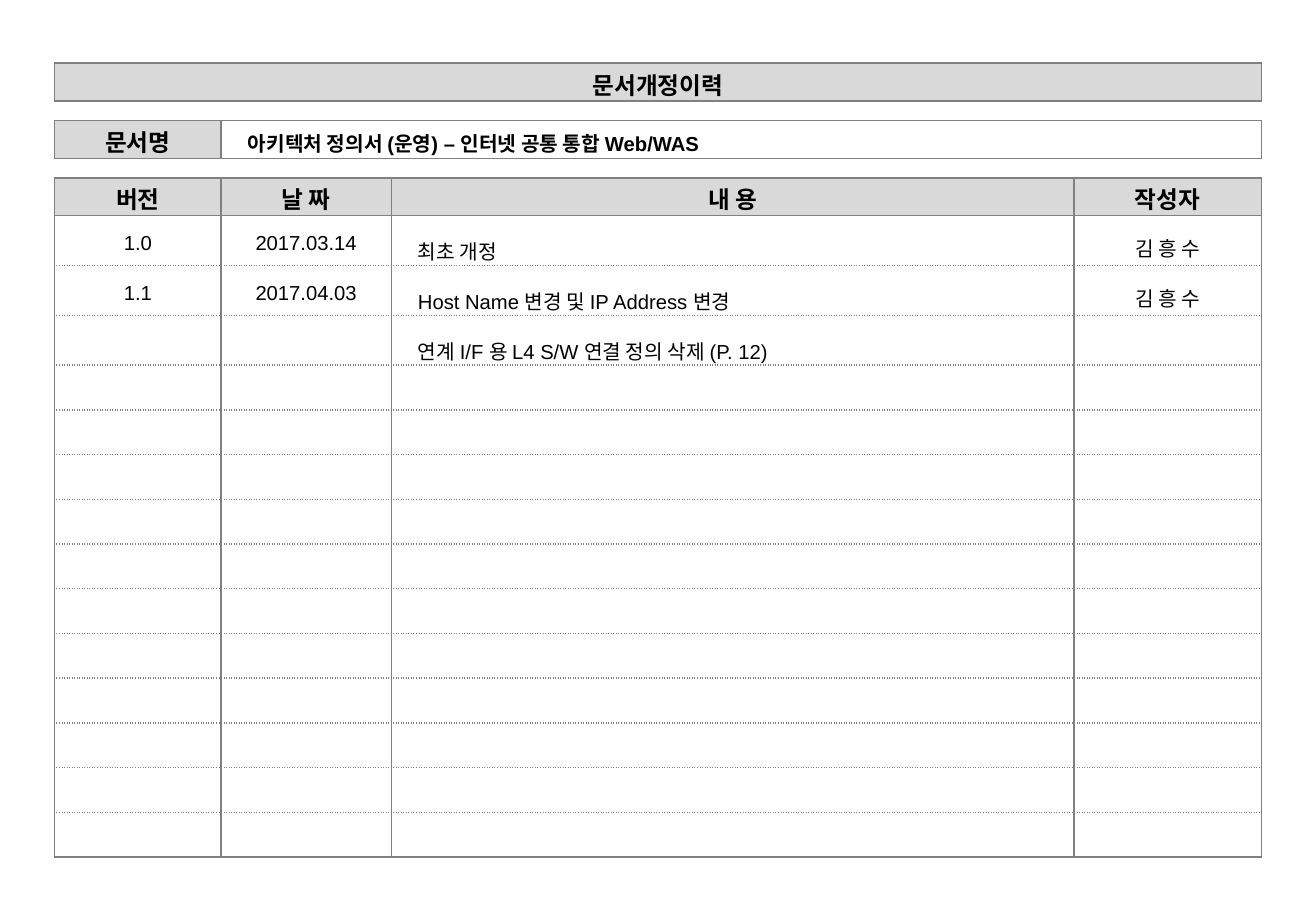
from dataclasses import dataclass

from lxml.etree import SubElement as Sub
from pptx import Presentation as Deck
from pptx.dml.color import RGBColor as Color
from pptx.enum.text import MSO_ANCHOR as Anchor, PP_ALIGN as Align
from pptx.oxml.ns import qn
from pptx.table import Table, _Cell as Cell
from pptx.util import Inches, Pt

COLORS = {"head": "D9D9D9", "line": "808080", "text": "000000"}
FONT = "Arial"
WIDTHS = (1.37, 1.4, 5.62, 1.54)
LAST = len(WIDTHS) - 1
FULL = 6.53
BLANKS = 11


@dataclass
class Row:
    """One table row: 'heads' cells are shaded, 'span' is where a merge starts."""
    texts: tuple[str, ...] = ()
    high: float = 0.31
    heads: int = 0
    span: int = LAST
    left: int = -1
    entry: bool = False
    sides: str = "solid"
    top: str = "solid"
    base: str = "solid"


def make_rows() -> list[Row]:
    gap = Row(high=0.16, span=0, sides="")
    rows = [
        Row(("문서개정이력",), heads=1, span=0),
        gap,
        Row(("문서명", "아키텍처 정의서 (운영) – 인터넷 공통 통합 Web/WAS"),
            heads=1, span=1, left=1),
        gap,
        Row(("버전", "날 짜", "내 용", "작성자"), heads=4),
    ]
    entries = (
        ("1.0", "2017.03.14", "최초 개정", "김 흥 수"),
        ("1.1", "2017.04.03", "Host Name 변경 및 IP Address 변경", "김 흥 수"),
        ("", "", "연계 I/F 용 L4 S/W 연결 정의 삭제 (P. 12)", ""),
    )
    rows += [Row(texts, 0.41, left=2, entry=True, top="dot", base="dot")
             for texts in entries]
    high = (FULL - sum(row.high for row in rows)) / BLANKS
    rows += [Row(high=high, entry=True, top="dot", base="dot")
             for _ in range(BLANKS)]
    rows[5].top = rows[-1].base = "solid"
    return rows


def add_edge(cell: Cell, tag: str, dash: str) -> None:
    edge = Sub(cell._tc.get_or_add_tcPr(), qn(f"a:{tag}"), w=str(Pt(1)))
    if not dash:
        Sub(edge, qn("a:noFill"))
        return
    fill = Sub(edge, qn("a:solidFill"))
    Sub(fill, qn("a:srgbClr"), val=COLORS["line"])
    Sub(edge, qn("a:prstDash"), val=dash)


def style_cell(cell: Cell, row: Row, col: int) -> None:
    cell.margin_left = cell.margin_right = cell.margin_bottom = 0
    cell.margin_top = Inches(0.12 if row.entry else 0)
    cell.vertical_anchor = Anchor.TOP if row.entry else Anchor.MIDDLE
    edges = {"lnL": row.sides, "lnR": row.sides, "lnT": row.top, "lnB": row.base}
    for tag, dash in edges.items():
        add_edge(cell, tag, dash)
    if col < row.heads:
        cell.fill.solid()
        cell.fill.fore_color.rgb = Color.from_string(COLORS["head"])
    else:
        cell.fill.background()


def write_cell(cell: Cell, row: Row, col: int) -> None:
    text = row.texts[col] if col < len(row.texts) else ""
    para = cell.text_frame.paragraphs[0]
    if not text:
        Sub(para._p, qn("a:endParaRPr"), sz="600")
        return
    para.text = text
    if col == row.left:
        para.level = 2
        para.line_spacing = 1.2
        para.space_after = Pt(1.2)
        props = para._p.get_or_add_pPr()
        props.set("marL", str(Inches(0.22)))
        props.set("indent", "0")
    else:
        para.alignment = Align.CENTER
        para.line_spacing = 1.1
    font = para.runs[0].font
    font.name = FONT
    font.size = Pt(14 if col < row.heads else 12)
    font.bold = not row.entry
    font.color.rgb = Color.from_string(COLORS["text"])


def fill_table(table: Table, rows: list[Row]) -> None:
    table.first_row = table.horz_banding = False
    for col, width in enumerate(WIDTHS):
        table.columns[col].width = Inches(width)
    for num, row in enumerate(rows):
        table.rows[num].height = Inches(row.high)
        if row.span < LAST:
            table.cell(num, row.span).merge(table.cell(num, LAST))
        for col in range(len(WIDTHS)):
            cell = table.cell(num, col)
            style_cell(cell, row, col)
            write_cell(cell, row, col)


def main() -> None:
    deck = Deck()
    deck.slide_width, deck.slide_height = Inches(10.83), Inches(7.5)
    slide = deck.slides.add_slide(deck.slide_layouts[6])
    rows = make_rows()
    frame = slide.shapes.add_table(
        len(rows), len(WIDTHS), Inches(0.45), Inches(0.52),
        Inches(sum(WIDTHS)), Inches(FULL))
    fill_table(frame.table, rows)
    deck.save("out.pptx")


if __name__ == "__main__":
    main()
